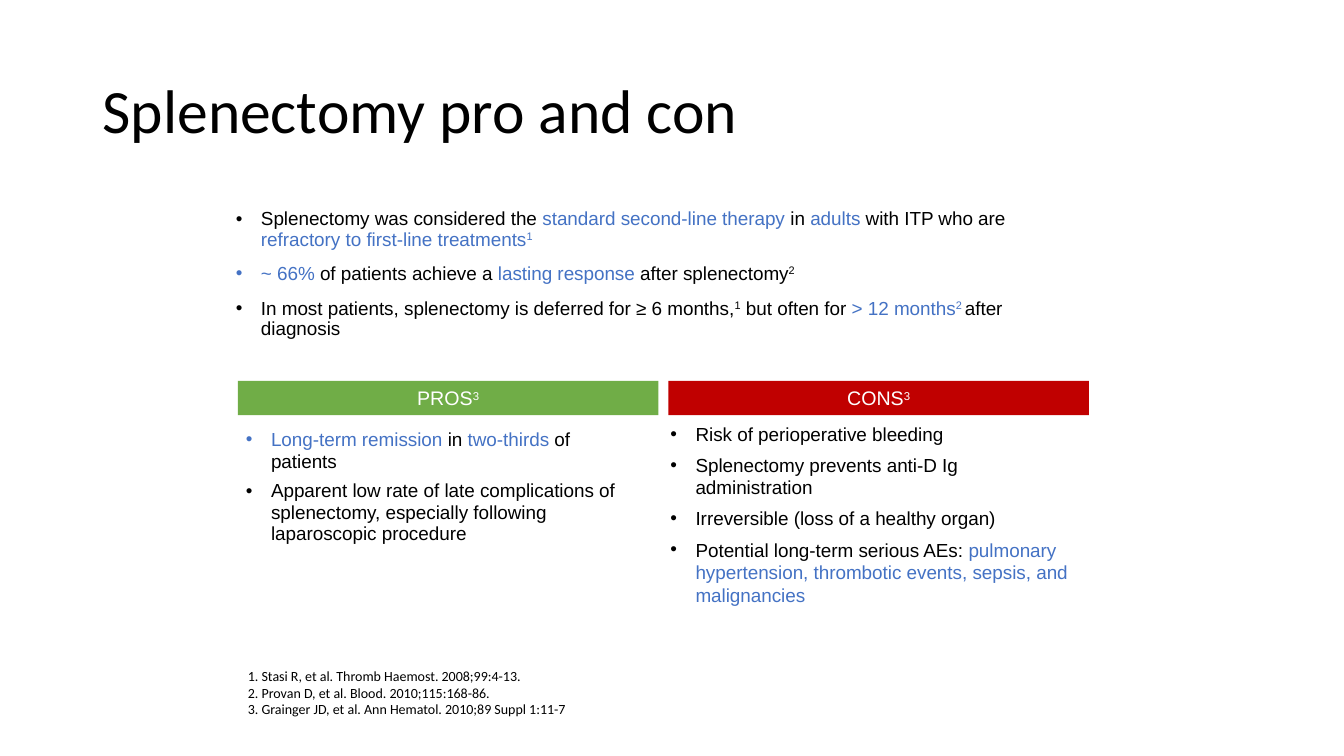
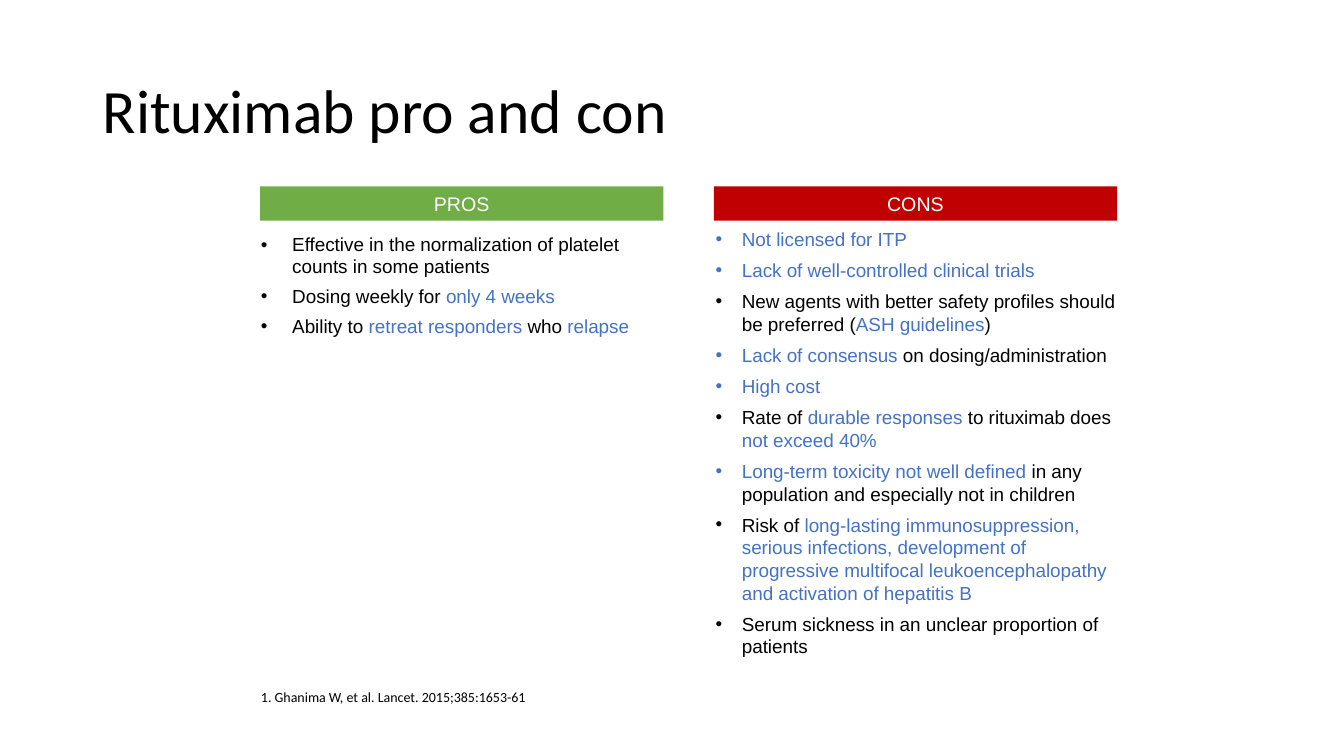
from lxml.etree import SubElement
from pptx import Presentation
from pptx.dml.color import RGBColor as RGB
from pptx.enum.shapes import MSO_SHAPE as SHAPE
from pptx.enum.text import MSO_ANCHOR as ANCHOR, PP_ALIGN as ALIGN
from pptx.oxml.ns import qn
from pptx.util import Inches, Pt

BLACK = RGB(0x00, 0x00, 0x00)
WHITE = RGB(0xFF, 0xFF, 0xFF)
BLUE = RGB(0x44, 0x72, 0xC4)
GREEN = RGB(0x70, 0xAD, 0x47)
RED = RGB(0xC0, 0x00, 0x00)
HEAD, BODY = "Calibri", "Arial"

# Text marks: *blue*, ^superscript^
FACTS = [
    "Splenectomy was considered the *standard second-line therapy *in *adults*"
    " with ITP who are *refractory to first-line treatments^1^*",
    "*~ 66% *of patients achieve a *lasting response *after splenectomy^2^",
    "In most patients, splenectomy is deferred for ≥ 6 months,^1^ but often for "
    "*> 12 months^2 ^*after diagnosis",
]
SURGERY_PROS = [
    "*Long-term remission *in *two-thirds* of patients",
    "Apparent low rate of late complications of splenectomy, especially "
    "following laparoscopic procedure",
]
SURGERY_CONS = [
    "Risk of perioperative bleeding",
    "Splenectomy prevents anti-D Ig administration",
    "Irreversible (loss of a healthy organ)",
    "Potential long-term serious AEs: *pulmonary hypertension, thrombotic "
    "events, sepsis, and malignancies*",
]
SURGERY_REFS = [
    "1. Stasi R, et al. Thromb Haemost. 2008;99:4-13.",
    "2. Provan D, et al. Blood. 2010;115:168-86.",
    "3. Grainger JD, et al. Ann Hematol. 2010;89 Suppl 1:11-7",
]
DRUG_PROS = [
    "Effective in the normalization of platelet counts in some patients",
    "Dosing weekly for *only 4 weeks*",
    "Ability to *retreat responders *who *relapse*",
]
DRUG_CONS = [
    "*Not licensed for ITP*",
    "*Lack of well-controlled clinical trials*",
    "New agents with better safety profiles should be preferred (*ASH guidelines*)",
    "*Lack of consensus *on dosing/administration",
    "*High cost*",
    "Rate of *durable responses *to rituximab does *not exceed 40%*",
    "*Long-term toxicity not well defined *in any population and especially "
    "not in children",
    "Risk of *long-lasting immunosuppression, serious infections, development of "
    "progressive multifocal leukoencephalopathy and activation of hepatitis B*",
    "Serum sickness in an unclear proportion of patients",
]
DRUG_REFS = ["1. Ghanima W, et al. Lancet. 2015;385:1653-61"]


def write(para, text, size, font=BODY, color=BLACK):
    """Fill a paragraph, turning the text marks into runs."""
    para.font.size, para.font.name = Pt(size), font
    para.font.color.rgb = color
    for i, chunk in enumerate(text.split("*")):
        for j, piece in enumerate(chunk.split("^")):
            if not piece:
                continue
            run = para.add_run()
            run.text = piece
            if i % 2:
                run.font.color.rgb = BLUE
            if j % 2:
                run.font._element.set("baseline", "30000")


def bullet(para, indent):
    props = para._p.get_or_add_pPr()
    props.set("marL", str(Inches(indent)))
    props.set("indent", str(-Inches(indent)))
    SubElement(props, qn("a:buFont")).set("typeface", "Arial")
    SubElement(props, qn("a:buChar")).set("char", "•")


def text_box(slide, box, lines, size, font=BODY, indent=0, line=1, before=0, after=0):
    frame = slide.shapes.add_textbox(*map(Inches, box)).text_frame
    frame.word_wrap = True
    for n, text in enumerate(lines):
        para = frame.add_paragraph() if n else frame.paragraphs[0]
        para.line_spacing = line
        para.space_before, para.space_after = Pt(before), Pt(after)
        if indent:
            bullet(para, indent)
        write(para, text, size, font)
    return frame


def title(slide, text):
    frame = text_box(slide, (0.92, 0.4, 11.5, 1.45), [text], 44, HEAD, line=0.9)
    frame.vertical_anchor = ANCHOR.MIDDLE


def band(slide, left, top, width, text, fill):
    shape = slide.shapes.add_shape(
        SHAPE.RECTANGLE, *map(Inches, (left, top, width, 0.34)))
    shape.shadow.inherit = False
    shape.fill.solid()
    shape.fill.fore_color.rgb = fill
    shape.line.fill.background()
    para = shape.text_frame.paragraphs[0]
    para.alignment = ALIGN.CENTER
    write(para, text, 14, color=WHITE)


def bands(slide, left, top, width, gap, note=""):
    band(slide, left, top, width, "PROS" + note, GREEN)
    band(slide, left + width + gap, top, width, "CONS" + note, RED)


def pros(slide, box, lines, indent):
    text_box(slide, box, lines, 13.5, indent=indent, line=0.95, after=6)


def cons(slide, box, lines, indent):
    text_box(slide, box, lines, 13.5, indent=indent, after=6)


def refs(slide, box, lines):
    text_box(slide, box, lines, 10, HEAD)


def surgery(slide):
    title(slide, "Splenectomy pro and con")
    text_box(slide, (2.24, 2.03, 8.5, 1.17), FACTS, 13.5,
             indent=0.25, line=0.9, before=10)
    bands(slide, 2.36, 3.78, 4.17, 0.1, "^3^")
    pros(slide, (2.34, 4.21, 4, 1.27), SURGERY_PROS, 0.25)
    cons(slide, (6.55, 4.14, 4.25, 1.94), SURGERY_CONS, 0.25)
    refs(slide, (2.36, 6.57, 7.05, 0.61), SURGERY_REFS)


def drug(slide):
    title(slide, "Rituximab pro and con")
    bands(slide, 2.58, 1.85, 4, 0.5)
    pros(slide, (2.49, 2.28, 4.09, 1.14), DRUG_PROS, 0.31)
    cons(slide, (7, 2.21, 4.23, 4.41), DRUG_CONS, 0.26)
    refs(slide, (2.49, 6.78, 5.96, 0.27), DRUG_REFS)


def main():
    deck = Presentation()
    deck.slide_width, deck.slide_height = Inches(13.33), Inches(7.5)
    for build in (surgery, drug):
        build(deck.slides.add_slide(deck.slide_layouts[6]))
    deck.save("out.pptx")


if __name__ == "__main__":
    main()
